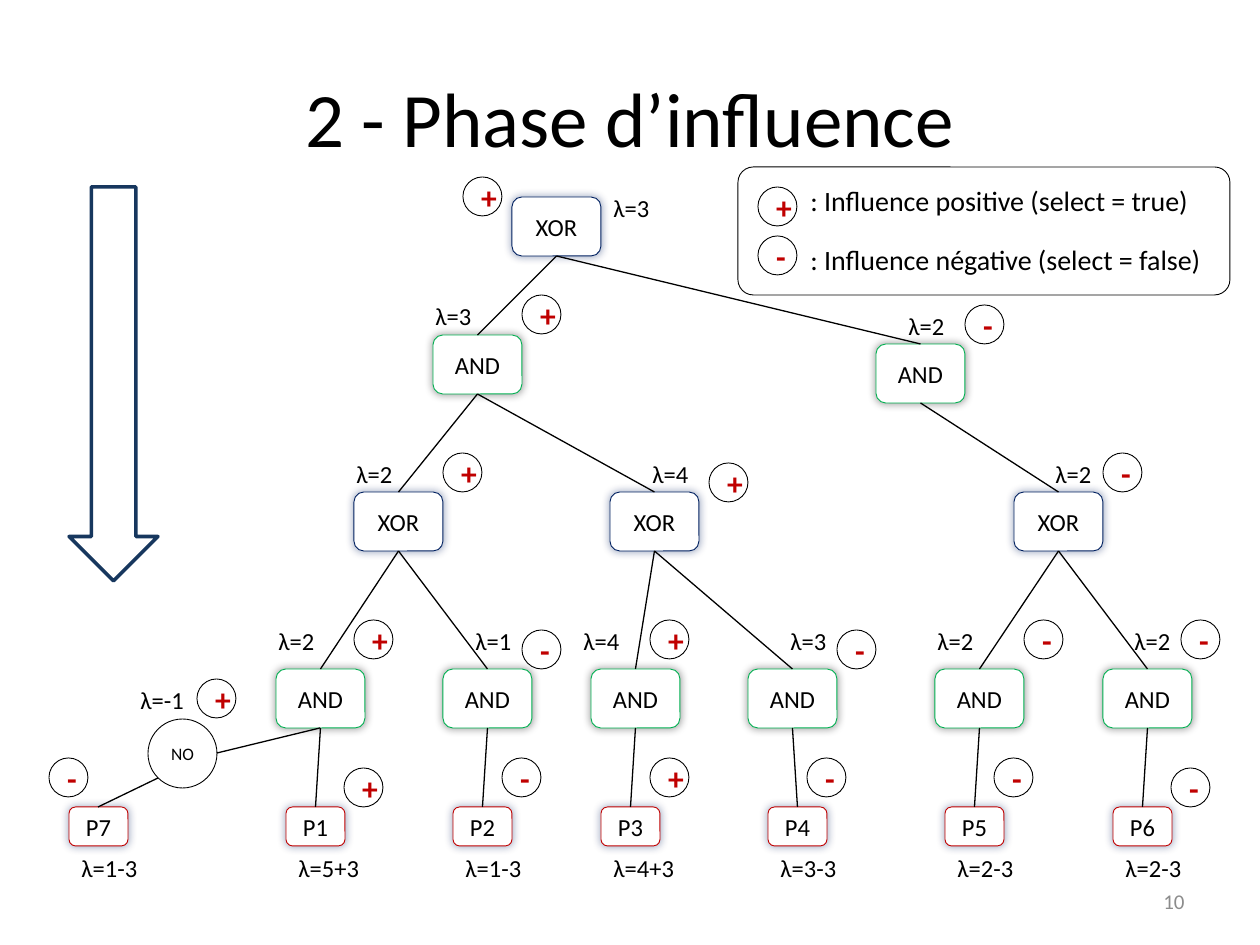
"""Build a slide with the influence phase of a gate tree."""
from lxml import etree
from pptx import Presentation, util as u
from pptx.dml.color import RGBColor
from pptx.enum import shapes, text
from pptx.oxml.ns import qn

PX = 914400 / 126
FONT = "Calibri"
COLOURS = {"ink": "000000", "paper": "FFFFFF", "navy": "002060", "green": "00B050",
           "red": "C00000", "arrow": "17375E", "grey": "8C8C8C"}

TITLE = "2 - Phase d’influence"
PAGE_NUMBER = "10"
STYLES = {"XOR": ((89, 59), "navy", "navy"),
          "AND": ((89, 59), "green", "ink"),
          "P": ((59, 39), "red", "navy")}
BADGE = 39
LEAF_TOP = 807
LABEL_TOP = 847

GATES = {
    "root": ("XOR", (512, 197), None, "λ=3", (601, 187), "+", (463, 177)),
    "left": ("AND", (433, 335), "root", "λ=3", (423, 295), "+", (522, 295)),
    "right": ("AND", (876, 344), "root", "λ=2", (896, 305), "-", (965, 305)),
    "xor1": ("XOR", (354, 492), "left", "λ=2", (344, 453), "+", (443, 453)),
    "xor2": ("XOR", (610, 492), "left", "λ=4", (640, 453), "+", (709, 463)),
    "xor3": ("XOR", (1014, 492), "right", "λ=2", (1043, 453), "-", (1103, 453)),
    "and1": ("AND", (276, 669), "xor1", "λ=2", (266, 620), "+", (354, 620)),
    "and2": ("AND", (443, 669), "xor1", "λ=1", (463, 620), "-", (522, 630)),
    "and3": ("AND", (591, 669), "xor2", "λ=4", (571, 620), "+", (650, 620)),
    "and4": ("AND", (748, 669), "xor2", "λ=3", (778, 620), "-", (837, 630)),
    "and5": ("AND", (935, 669), "xor3", "λ=2", (925, 620), "-", (1024, 620)),
    "and6": ("AND", (1103, 669), "xor3", "λ=2", (1122, 620), "-", (1181, 620)),
}
LEAVES = [
    ("P1", 286, "and1", "λ=5+3", "+", (344, 768)),
    ("P2", 453, "and2", "λ=1-3", "-", (502, 758)),
    ("P3", 601, "and3", "λ=4+3", "+", (650, 758)),
    ("P4", 768, "and4", "λ=3-3", "-", (807, 758)),
    ("P5", 945, "and5", "λ=2-3", "-", (994, 758)),
    ("P6", 1113, "and6", "λ=2-3", "-", (1171, 768)),
    ("P7", 69, None, "λ=1-3", "-", (49, 758)),
]
NEGATION = ("NO", (148, 719, 69, 69), "λ=-1", (128, 679), "+", (197, 679))
NEGATION_EDGES = [((320, 728), (217, 753)), ((158, 778), (98, 807))]
LEGEND = [("+", (758, 187), ": Influence positive (select = true)", (798, 177)),
          ("-", (758, 236), ": Influence négative (select = false)", (798, 236))]


def emu(*lengths):
    return [u.Emu(round(length * PX)) for length in lengths]


def rgb(name):
    return RGBColor.from_string(COLOURS[name])


def write(shape, words, size, colour="ink", bold=False, align=text.PP_ALIGN.CENTER):
    para = shape.text_frame.paragraphs[0]
    para.text = words
    para.alignment = align
    font = para.font
    font.name, font.size, font.bold = FONT, u.Pt(size), bold
    font.color.rgb = rgb(colour)


def add_glow(shape, colour):
    effects = shape._element.spPr.find(qn("a:effectLst"))
    shadow = etree.SubElement(effects, qn("a:outerShdw"), blurRad="63500", dist="0",
                              algn="ctr", rotWithShape="0")
    tint = etree.SubElement(shadow, qn("a:srgbClr"), val=COLOURS[colour])
    etree.SubElement(tint, qn("a:alpha"), val="40000")


def add_outline(page, kind, area, colour="ink", width=0.5):
    shape = page.shapes.add_shape(kind, *emu(*area))
    shape.shadow.inherit = False
    shape.fill.solid()
    shape.fill.fore_color.rgb = rgb("paper")
    shape.line.color.rgb = rgb(colour)
    shape.line.width = u.Pt(width)
    shape.text_frame.word_wrap = True
    shape.text_frame.vertical_anchor = text.MSO_ANCHOR.MIDDLE
    return shape


def add_node(page, style, words, corner):
    size, colour, glow = STYLES[style]
    node = add_outline(page, shapes.MSO_SHAPE.ROUNDED_RECTANGLE, corner + size, colour)
    add_glow(node, glow)
    write(node, words, 14)
    return node


def add_badge(page, sign, corner):
    badge = add_outline(page, shapes.MSO_SHAPE.OVAL, corner + (BADGE, BADGE))
    write(badge, sign, 18, "red", bold=True)


def add_label(page, words, corner, size=14):
    width, height = (len(words) * 13 + 23, 43) if size == 14 else (421, 47)
    box = page.shapes.add_textbox(*emu(*corner, width, height))
    box.text_frame.word_wrap = False
    box.text_frame.auto_size = text.MSO_AUTO_SIZE.SHAPE_TO_FIT_TEXT
    write(box, words, size, align=text.PP_ALIGN.LEFT)


def add_block(page, words, area, size, colour, align):
    box = page.shapes.add_textbox(*emu(*area))
    box.text_frame.word_wrap = True
    box.text_frame.vertical_anchor = text.MSO_ANCHOR.MIDDLE
    write(box, words, size, colour, align=align)


def add_edge(page, start=(0, 0), end=(0, 0)):
    edge = page.shapes.add_connector(shapes.MSO_CONNECTOR.STRAIGHT, *emu(*start, *end))
    edge.line.color.rgb = rgb("ink")
    edge.line.width = u.Pt(0.75)
    etree.SubElement(edge._element.spPr, qn("a:effectLst"))
    return edge


def join(page, parent, child):
    edge = add_edge(page)
    edge.begin_connect(parent, 2)
    edge.end_connect(child, 0)


def add_tree(page):
    nodes, labels, badges = {}, [], []
    for name, (label, corner, parent, value, value_at, sign, sign_at) in GATES.items():
        nodes[name] = add_node(page, label, label, corner)
        if parent:
            join(page, nodes[parent], nodes[name])
        labels.append((value, value_at))
        badges.append((sign, sign_at))
    for label, left, parent, value, sign, sign_at in LEAVES:
        leaf = add_node(page, "P", label, (left, LEAF_TOP))
        if parent:
            join(page, nodes[parent], leaf)
        labels.append((value, (left, LABEL_TOP)))
        badges.append((sign, sign_at))
    label, area, value, value_at, sign, sign_at = NEGATION
    write(add_outline(page, shapes.MSO_SHAPE.OVAL, area), label, 10)
    for start, end in NEGATION_EDGES:
        add_edge(page, start, end)
    for words, corner in labels + [(value, value_at)]:
        add_label(page, words, corner)
    for mark, corner in badges + [(sign, sign_at)]:
        add_badge(page, mark, corner)


def add_legend(page):
    frame = add_outline(page, shapes.MSO_SHAPE.ROUNDED_RECTANGLE, (738, 167, 492, 128))
    frame.adjustments[0] = 0.12
    for sign, sign_at, words, words_at in LEGEND:
        add_badge(page, sign, sign_at)
        add_label(page, words, words_at, 16)


def main():
    deck = Presentation()
    deck.slide_width, deck.slide_height = emu(1260, 945)
    page = deck.slides.add_slide(deck.slide_layouts[6])
    add_block(page, TITLE, (63, 38, 1134, 157), 44, "ink", text.PP_ALIGN.CENTER)
    add_tree(page)
    arrow = add_outline(page, shapes.MSO_SHAPE.UP_ARROW, (69, 187, 89, 394), "arrow", 2)
    arrow.rotation = 180
    add_legend(page)
    add_block(page, PAGE_NUMBER, (903, 876, 294, 50), 12, "grey", text.PP_ALIGN.RIGHT)
    deck.save("out.pptx")


if __name__ == "__main__":
    main()
